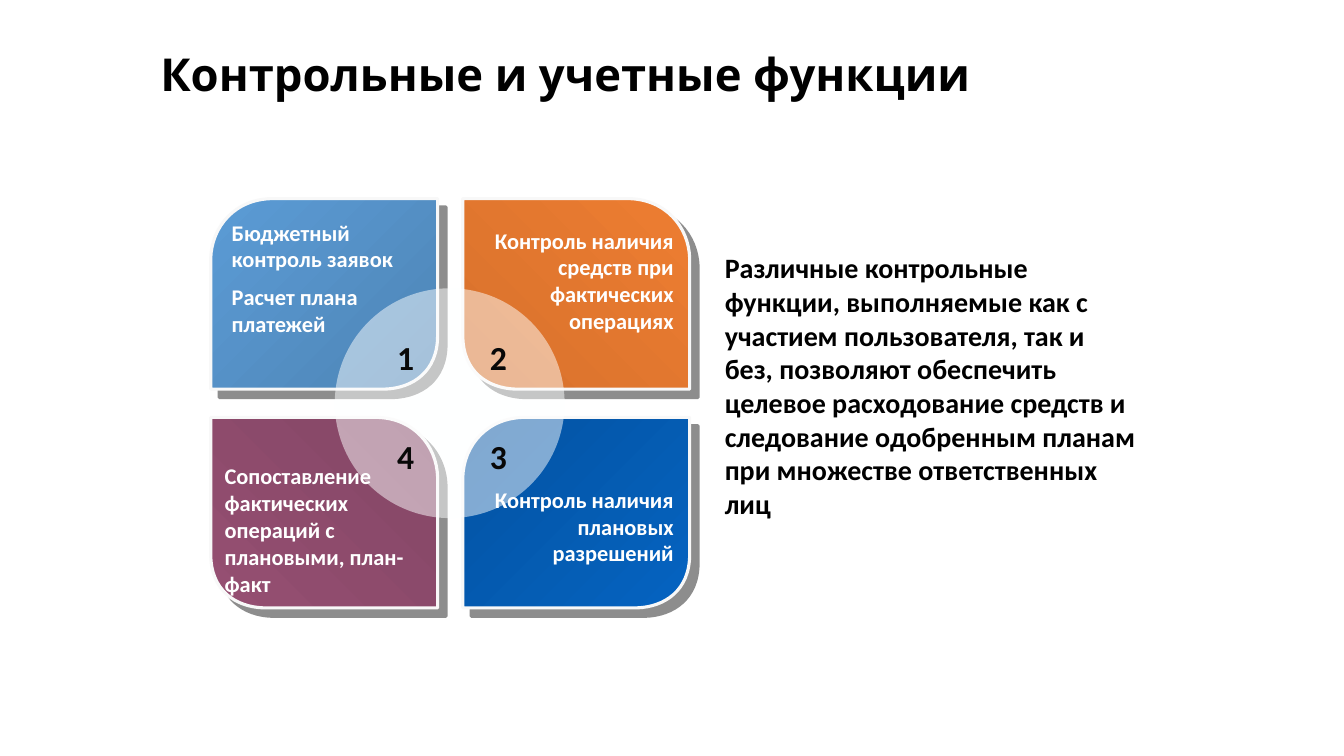
from lxml import etree
from pptx import Presentation
from pptx.dml.color import RGBColor
from pptx.enum.shapes import MSO_SHAPE
from pptx.enum.text import MSO_ANCHOR, MSO_AUTO_SIZE, PP_ALIGN
from pptx.oxml import parse_xml
from pptx.oxml.ns import nsdecls, qn
from pptx.util import Inches, Pt


def rgb(value):
    return RGBColor.from_string(value)


def add_text(box, lines, size, color, align=PP_ALIGN.LEFT, wrap=True):
    tb = s.shapes.add_textbox(*[Inches(v) for v in box])
    tf = tb.text_frame
    tf.word_wrap = wrap
    tf.auto_size = MSO_AUTO_SIZE.SHAPE_TO_FIT_TEXT
    tf.text = "\n".join(lines)
    for i, p in enumerate(tf.paragraphs):
        p.alignment = align
        if i:
            p.space_before = Pt(size / 2)
        font = p.runs[0].font
        font.name, font.size, font.bold = "Calibri", Pt(size), True
        font.color.rgb = rgb(color)


prs = Presentation()
prs.slide_width, prs.slide_height = Inches(13.33), Inches(7.5)
s = prs.slides.add_slide(prs.slide_layouts[0])
subtitle = s.placeholders[1].element
subtitle.getparent().remove(subtitle)

title = s.shapes.title
title.left, title.top = Inches(1.49), Inches(0.45)
title.width, title.height = Inches(10.73), Inches(0.63)
tf = title.text_frame
tf.text = "Контрольные и учетные функции"
tf.vertical_anchor = MSO_ANCHOR.MIDDLE
p = tf.paragraphs[0]
p.alignment = PP_ALIGN.LEFT
p.line_spacing = 0.9
font = p.runs[0].font
font.name, font.size, font.bold = "Karla", Pt(32.4), True
font.color.rgb = rgb("000000")

W, H = 2.25, 1.89
outline = [
    (0, H), (0, 0.59),
    (0.01, 0.28), (0.24, 0), (0.62, 0),
    (W, 0), (W, 1.36),
    (W, 1.72), (2, 1.88), (1.73, H),
]
curve_starts = (1, 6)
petals = [
    (2.09, 1.97, False, "4E85B6", "5B9BD5"),
    (4.59, 1.97, True, "D7712C", "ED7D31"),
    (2.09, 4.14, True, "954F72", "844665"),
    (4.59, 4.14, False, "0563C1", "0453A1"),
]
for left, top, flipped, start, end in petals:
    points = [(Inches(left + (W - x if flipped else x)), Inches(top + y)) for x, y in outline]
    builder = s.shapes.build_freeform(*points[0])
    builder.add_line_segments(points[1:], close=True)
    sp = builder.convert_to_shape()
    segments = list(sp.element.spPr.iter(qn("a:lnTo")))
    for first in curve_starts:
        curve = etree.Element(qn("a:cubicBezTo"))
        segments[first].addprevious(curve)
        for segment in segments[first:first + 3]:
            curve.append(segment[0])
            segment.getparent().remove(segment)
    sp.fill.gradient()
    sp.fill.gradient_angle = 45 if flipped else 135
    for stop, color, position in zip(sp.fill.gradient_stops, (start, end), (0, 1)):
        stop.color.rgb = rgb(color)
        stop.position = position
    sp.line.color.rgb = rgb("F8F8F8")
    sp.line.width = Pt(2.25)
    sp.shadow.inherit = False
    sp.element.spPr.find(qn("a:effectLst")).append(parse_xml(
        f'<a:outerShdw {nsdecls("a")} dist="{Pt(8.5)}" dir="2700000" algn="ctr" rotWithShape="0">'
        '<a:srgbClr val="1C1C1C"><a:alpha val="50000"/></a:srgbClr></a:outerShdw>'))

hub = s.shapes.add_shape(MSO_SHAPE.OVAL, Inches(3.32), Inches(2.86), Inches(2.28), Inches(2.28))
hub.shadow.inherit = False
hub.line.fill.background()
hub.fill.solid()
hub.fill.fore_color.rgb = rgb("FEFFFF")
hub_color = hub.element.spPr.find(qn("a:solidFill"))[0]
etree.SubElement(hub_color, qn("a:alpha"), val="50000")

captions = [
    ((2.2, 2.12, 2.03, 1.31), ["Бюджетный контроль заявок", "Расчет плана платежей"], PP_ALIGN.LEFT),
    ((4.59, 2.2, 2.19, 1.18), ["Контроль наличия средств при фактических операциях"], PP_ALIGN.RIGHT),
    ((2.13, 4.54, 2.19, 1.45), ["Сопоставление фактических операций с плановыми, план-факт"], PP_ALIGN.LEFT),
    ((4.59, 4.77, 2.19, 0.91), ["Контроль наличия плановых разрешений"], PP_ALIGN.RIGHT),
]
for box, lines, align in captions:
    add_text(box, lines, 16, "FFFFFF", align)

for i, number in enumerate("1243"):
    row, col = divmod(i, 2)
    add_text((3.84 + 0.92 * col, 3.29 + 0.99 * row, 0.37, 0.5), [number], 24, "080808", wrap=False)

add_text((7.09, 2.44, 4.3, 2.79),
         ["Различные контрольные функции, выполняемые как с участием пользователя, так и без, "
          "позволяют обеспечить целевое расходование средств и следование одобренным планам "
          "при множестве ответственных лиц"], 20, "000000")

prs.save("out.pptx")
